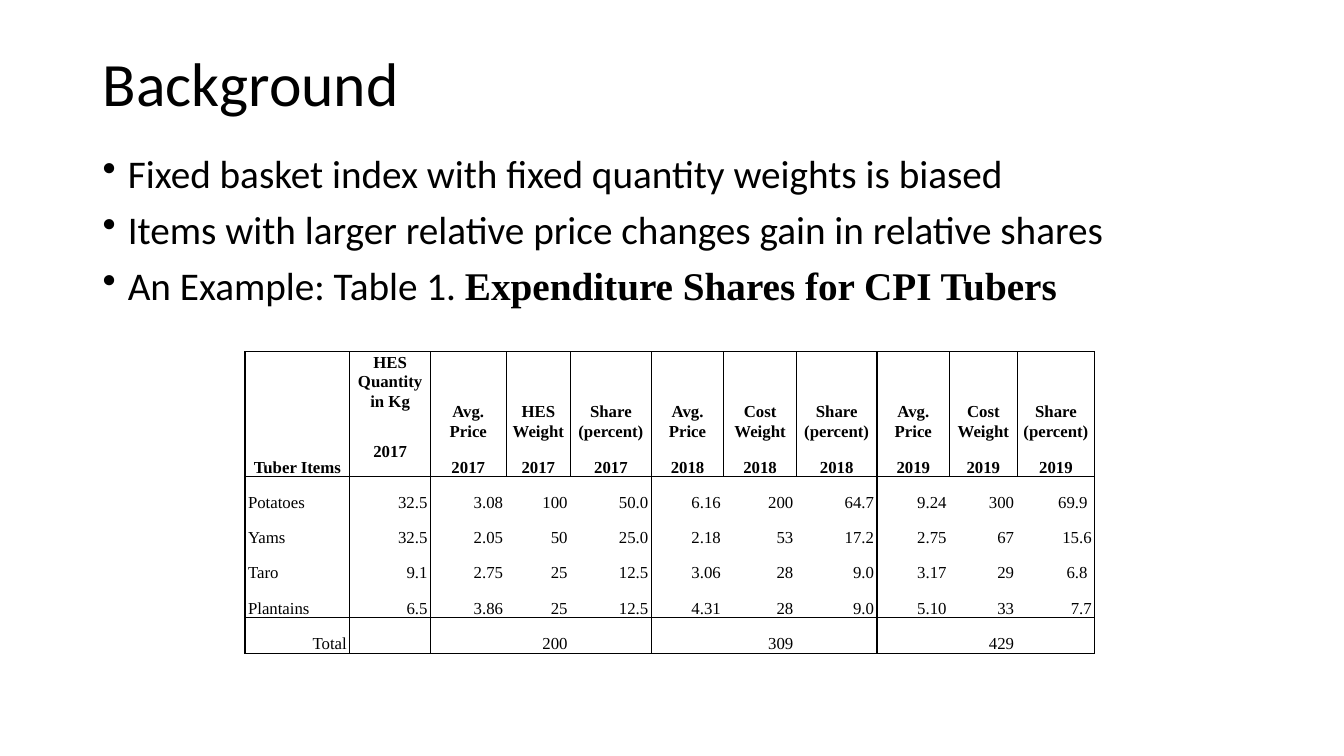
from lxml import etree
from pptx import Presentation
from pptx.dml.color import RGBColor
from pptx.enum.text import MSO_ANCHOR, PP_ALIGN
from pptx.oxml.ns import qn
from pptx.util import Pt

PX = 9144
BLACK = RGBColor(0, 0, 0)
SANS, SERIF = "Calibri", "Times New Roman"
LEFT, CENTER, RIGHT = PP_ALIGN.LEFT, PP_ALIGN.CENTER, PP_ALIGN.RIGHT
TOP, MIDDLE, BOTTOM = MSO_ANCHOR.TOP, MSO_ANCHOR.MIDDLE, MSO_ANCHOR.BOTTOM

BULLETS = [
    [("Fixed basket index with fixed quantity weights is biased", {})],
    [("Items with larger relative price changes gain in relative shares", {})],
    [("An Example: Table 1. ", {}),
     ("Expenditure Shares for CPI Tubers", {"font": SERIF, "bold": True})],
]
COLUMNS = [104, 80, 75, 64, 80, 72, 72, 80, 72, 67, 77]
ROWS = [89] + [35] * 6
CELLS = [
    ["", "HES Quantity in Kg", "Avg. Price", "HES Weight", "Share (percent)"]
    + ["Avg. Price", "Cost Weight", "Share (percent)"] * 2,
    ["Tuber Items", "2017"] + ["2017"] * 3 + ["2018"] * 3 + ["2019"] * 3,
    ["Potatoes", "32.5", "3.08", "100", "50.0", "6.16", "200", "64.7", "9.24", "300", "69.9 "],
    ["Yams", "32.5", "2.05", "50", "25.0", "2.18", "53", "17.2", "2.75", "67", "15.6"],
    ["Taro", "9.1", "2.75", "25", "12.5", "3.06", "28", "9.0", "3.17", "29", "6.8 "],
    ["Plantains", "6.5", "3.86", "25", "12.5", "4.31", "28", "9.0", "5.10", "33", "7.7"],
    ["Total", "", "", "200", "", "", "309", "", "", "429", ""],
]
HEADER_ROWS = 2
TOTAL_ROW = len(ROWS) - 1
ROW_RULES = {0, HEADER_ROWS, TOTAL_ROW, len(ROWS)}
COLUMN_RULES = {0, 1, 2, 5, 8, len(COLUMNS)}


def write(p, text, font=SANS, size=28, bold=False, align=LEFT, spacing=0.9, before=0):
    p.alignment = align
    p.line_spacing = spacing
    p.space_before = Pt(before)
    r = p.add_run()
    r.text = text
    r.font.name = font
    r.font.size = Pt(size)
    r.font.bold = bold
    r.font.color.rgb = BLACK


class SlideBuilder:
    def __init__(self, prs):
        self.slide = prs.slides.add_slide(prs.slide_layouts[6])

    def textbox(self, x, y, w, h, anchor=TOP):
        tf = self.slide.shapes.add_textbox(x * PX, y * PX, w * PX, h * PX).text_frame
        tf.word_wrap = True
        tf.vertical_anchor = anchor
        return tf

    def title(self, text, x, y, w, h):
        write(self.textbox(x, y, w, h, MIDDLE).paragraphs[0], text, size=44)

    def bullets(self, items, x, y, w, h):
        tf = self.textbox(x, y, w, h)
        for i, runs in enumerate(items):
            p = tf.add_paragraph() if i else tf.paragraphs[0]
            for text, style in runs:
                write(p, text, before=10, **style)
            pPr = p._p.get_or_add_pPr()
            pPr.set("marL", str(25 * PX))
            pPr.set("indent", str(-25 * PX))
            etree.SubElement(pPr, qn("a:buChar")).set("char", "•")

    def borders(self, cell, **sides):
        tcPr = cell._tc.get_or_add_tcPr()
        for side, shown in sides.items():
            ln = etree.SubElement(tcPr, qn(f"a:ln{side}"), w=str(Pt(1)))
            if shown:
                fill = etree.SubElement(ln, qn("a:solidFill"))
                etree.SubElement(fill, qn("a:srgbClr")).set("val", str(BLACK))
            else:
                etree.SubElement(ln, qn("a:noFill"))

    def cell(self, cell, text, row, col):
        header = row < HEADER_ROWS
        cell.margin_left = cell.margin_right = 3 * PX
        cell.margin_top = cell.margin_bottom = 0
        cell.vertical_anchor = TOP if header and col == 1 else BOTTOM
        if header:
            align = CENTER
        else:
            align = LEFT if col == 0 and row < TOTAL_ROW else RIGHT
        write(cell.text_frame.paragraphs[0], text, font=SERIF, size=12,
              bold=header, align=align, spacing=1.07)
        self.borders(cell, L=header or col in COLUMN_RULES,
                     R=header or col + 1 in COLUMN_RULES,
                     T=row in ROW_RULES, B=row + 1 in ROW_RULES)
        cell.fill.background()

    def table(self, rows, x, y, widths, heights):
        table = self.slide.shapes.add_table(
            len(heights), len(widths), x * PX, y * PX,
            sum(widths) * PX, sum(heights) * PX).table
        table.first_row = table.horz_banding = False
        for column, width in zip(table.columns, widths):
            column.width = width * PX
        for row, height in zip(table.rows, heights):
            row.height = height * PX
        for i, values in enumerate(rows):
            for j, text in enumerate(values):
                self.cell(table.cell(i, j), text, i, j)


def main():
    prs = Presentation()
    prs.slide_width, prs.slide_height = 1333 * PX, 750 * PX
    s = SlideBuilder(prs)
    s.title("Background", 92, 40, 1150, 91)
    s.bullets(BULLETS, 92, 148, 1150, 528)
    s.table(CELLS, 243, 349, COLUMNS, ROWS)
    prs.save("out.pptx")


if __name__ == "__main__":
    main()
